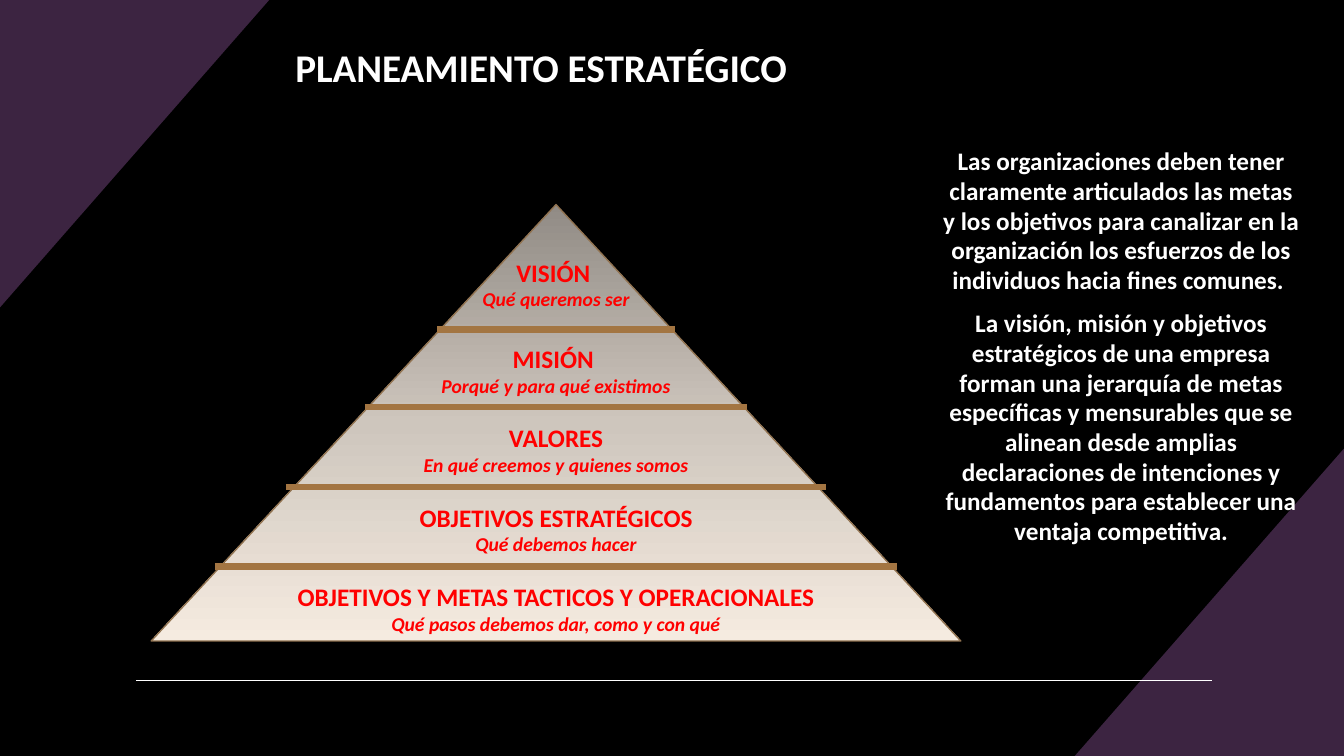
from copy import deepcopy

from pptx import Presentation
from pptx.dml.color import RGBColor
from pptx.enum.shapes import MSO_CONNECTOR, MSO_SHAPE
from pptx.enum.text import PP_ALIGN
from pptx.oxml.ns import qn
from pptx.oxml.xmlchemy import OxmlElement
from pptx.util import Pt

STRAIGHT = MSO_CONNECTOR.STRAIGHT
TRIANGLE = MSO_SHAPE.FLOWCHART_EXTRACT
LEFT, CENTER = PP_ALIGN.LEFT, PP_ALIGN.CENTER

PX = 9144  # EMU per px, 100 px to the inch
WIDTH, HEIGHT = 1333, 750
CORNER_W, CORNER_H = 267, 305
AXIS = 551.5  # vertical axis of the pyramid
LABEL_H = 64

FONT = "Calibri"
BLACK, WHITE, RED = "000000", "FFFFFF", "FF0000"
PURPLE, BROWN, EDGE = "3C2441", "A37542", "917351"
SHADES = ["918B85", "CEC6BD", "F5EBE0"]

# heading, question, label top, label width
LEVELS = [
    ("VISIÓN ", "Qué queremos ser", 250, 252),
    ("MISIÓN ", "Porqué y para qué existimos", 336, 299),
    ("VALORES", "En qué creemos y quienes somos", 414, 378),
    ("OBJETIVOS ESTRATÉGICOS", "Qué debemos hacer", 493, 378),
    ("OBJETIVOS Y METAS TACTICOS Y OPERACIONALES",
     "Qué pasos debemos dar, como y con qué", 572, 677),
]
# y, width
BARS = [(562, 677), (483, 536), (404, 378), (327, 236)]
REMARKS = [
    "Las organizaciones deben tener claramente articulados las metas y los "
    "objetivos para canalizar en la organización los esfuerzos de los "
    "individuos hacia fines comunes. ",
    "La visión, misión y objetivos estratégicos de una empresa forman una "
    "jerarquía de metas específicas y mensurables que se alinean desde "
    "amplias declaraciones de intenciones y fundamentos para establecer una "
    "ventaja competitiva.",
]


def px(n):
    return round(n * PX)


def rgb(value):
    return RGBColor.from_string(value)


def add_corner(slide, points):
    builder = slide.shapes.build_freeform(*points[0], scale=PX)
    builder.add_line_segments(points[1:], close=True)
    sp = builder.convert_to_shape()
    sp.shadow.inherit = False
    sp.fill.solid()
    sp.fill.fore_color.rgb = rgb(PURPLE)
    sp.line.fill.background()


def add_line(slide, x1, x2, y, color, weight):
    line = slide.shapes.add_connector(STRAIGHT, px(x1), px(y), px(x2), px(y))
    line.line.color.rgb = rgb(color)
    line.line.width = Pt(weight)
    line._element.spPr.append(OxmlElement("a:effectLst"))


def add_pyramid(slide, x, y, w, h):
    sp = slide.shapes.add_shape(TRIANGLE, px(x), px(y), px(w), px(h))
    sp.shadow.inherit = False
    sp.line.color.rgb = rgb(EDGE)
    sp.line.width = Pt(1)
    sp.fill.gradient()
    sp.fill.gradient_angle = 270
    # The default gradient has two stops; add the middle one
    stops = sp._element.spPr.find(".//" + qn("a:gsLst"))
    stops.insert(1, deepcopy(stops[0]))
    for i, (stop, shade) in enumerate(zip(sp.fill.gradient_stops, SHADES)):
        stop.color.rgb = rgb(shade)
        stop.position = i / 2


def add_text(slide, x, y, w, h, lines, color, align=CENTER, before=0, spacing=None):
    """Each line is a tuple of text, size and italic."""
    tf = slide.shapes.add_textbox(px(x), px(y), px(w), px(h)).text_frame
    tf.word_wrap = True
    for i, (text, size, italic) in enumerate(lines):
        p = tf.add_paragraph() if i else tf.paragraphs[0]
        p.text = text
        p.alignment = align
        p.space_before = Pt(before)
        p.line_spacing = spacing
        font = p.runs[0].font
        font.name, font.size = FONT, Pt(size)
        font.bold, font.italic = True, italic
        font.color.rgb = rgb(color)


def main():
    prs = Presentation()
    prs.slide_width, prs.slide_height = px(WIDTH), px(HEIGHT)
    slide = prs.slides.add_slide(prs.slide_layouts[6])

    # Background, corners and footer rule
    slide.background.fill.solid()
    slide.background.fill.fore_color.rgb = rgb(BLACK)
    add_corner(slide, [(WIDTH, HEIGHT - CORNER_H), (WIDTH, HEIGHT),
                       (WIDTH - CORNER_W, HEIGHT)])
    add_corner(slide, [(0, CORNER_H), (0, 0), (CORNER_W, 0)])
    add_line(slide, 135, 1202, 675, WHITE, 1)

    # Pyramid with its levels and dividing bars
    add_pyramid(slide, 150, 203, 803, 433)
    for heading, question, y, w in LEVELS:
        add_text(slide, AXIS - w / 2, y, w, LABEL_H,
                 [(heading, 18, False), (question, 14, True)], RED)
    for y, w in BARS:
        add_line(slide, AXIS - w / 2, AXIS + w / 2, y, BROWN, 4.5)

    # Remarks and title
    add_text(slide, 925, 141, 374, 530, [(text, 18, False) for text in REMARKS],
             WHITE, before=10, spacing=0.98)
    add_text(slide, 283, 38, 625, 57, [("PLANEAMIENTO ESTRATÉGICO", 28, False)],
             WHITE, align=LEFT)

    prs.save("out.pptx")


if __name__ == "__main__":
    main()
